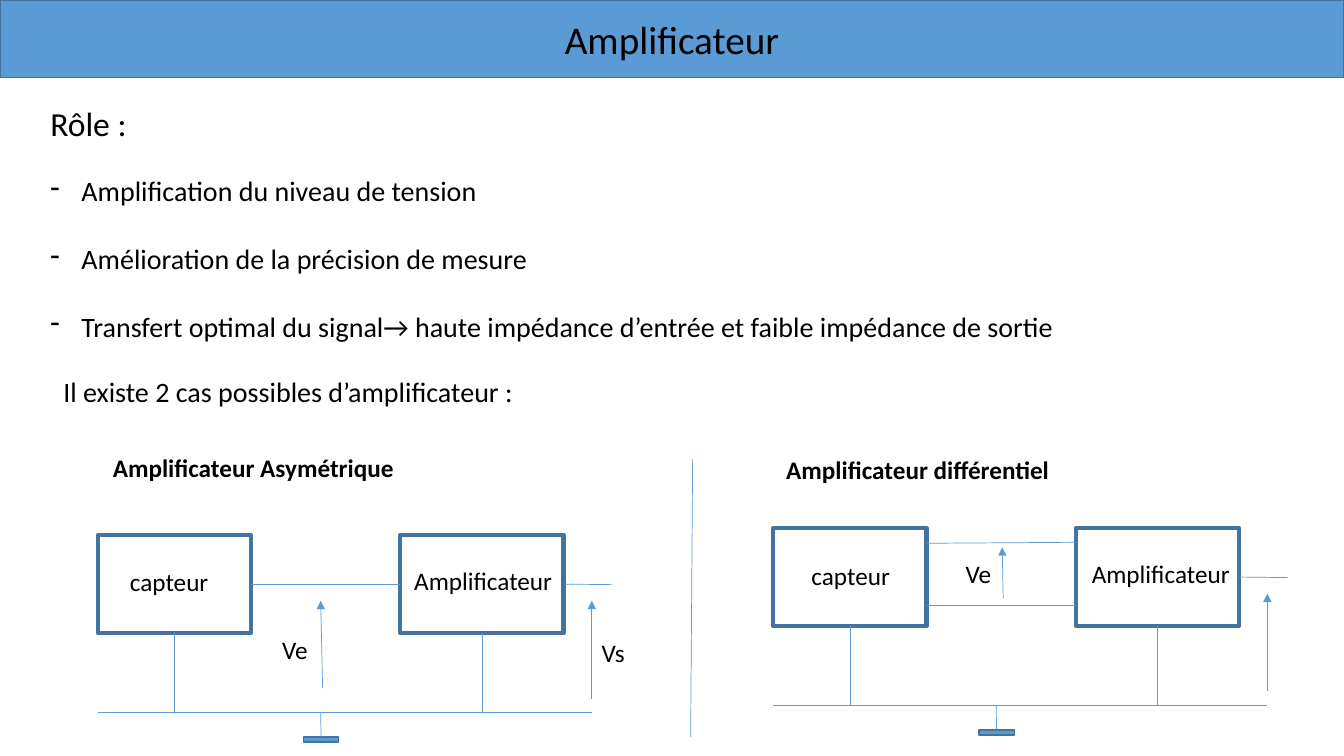
from lxml.etree import SubElement
from pptx import Presentation
from pptx.dml.color import RGBColor
from pptx.enum.shapes import MSO_CONNECTOR, MSO_SHAPE
from pptx.enum.text import MSO_ANCHOR, PP_ALIGN
from pptx.oxml.ns import qn
from pptx.util import Inches, Pt

COLORS = {"blue": "5B9BD5", "edge": "43739E", "text": "000000"}
FONT = "Calibri"
TOP, LEFT, BOTTOM, RIGHT = range(4)


def color(name):
    return RGBColor.from_string(COLORS[name])


class Board:
    """Draws styled elements on one slide, with lengths in inches."""

    def __init__(self, slide):
        self.slide = slide

    def styled_run(self, paragraph, text, size, bold=False):
        run = paragraph.add_run()
        run.text = text
        run.font.name = FONT
        run.font.size = Pt(size)
        run.font.bold = bold
        run.font.color.rgb = color("text")

    def box(self, left, top, width, height, weight=1, filled=True):
        shape = self.slide.shapes.add_shape(
            MSO_SHAPE.RECTANGLE, *map(Inches, (left, top, width, height)))
        shape.shadow.inherit = False
        if filled:
            shape.fill.solid()
            shape.fill.fore_color.rgb = color("blue")
        else:
            shape.fill.background()
        shape.line.color.rgb = color("edge")
        shape.line.width = Pt(weight)
        return shape

    def text_frame(self, left, top, width, height):
        area = self.slide.shapes.add_textbox(
            *map(Inches, (left, top, width, height)))
        area.text_frame.word_wrap = False
        return area.text_frame

    def label(self, text, left, top, width, height=0.4, size=18, bold=False):
        frame = self.text_frame(left, top, width, height)
        self.styled_run(frame.paragraphs[0], text, size, bold)

    def wire(self, start, end, begin_at=None, end_at=None, arrow=False):
        """Draw a thin line; begin_at and end_at are (shape, side) joints."""
        line = self.slide.shapes.add_connector(
            MSO_CONNECTOR.STRAIGHT, *map(Inches, (*start, *end)))
        line.line.color.rgb = color("blue")
        line.line.width = Pt(0.5)
        if begin_at:
            line.begin_connect(*begin_at)
        if end_at:
            line.end_connect(*end_at)
        props = line._element.spPr
        if arrow:
            SubElement(props.find(qn("a:ln")), qn("a:tailEnd"), type="triangle")
        SubElement(props, qn("a:effectLst"))

    def role_list(self, heading, roles):
        frame = self.text_frame(0.4, 0.97, 10.28, 2.49)
        self.styled_run(frame.paragraphs[0], heading, 24)
        for index, role in enumerate(roles):
            paragraph = frame.add_paragraph()
            paragraph.space_before = Pt(24.4 if index else 22)
            props = paragraph._p.get_or_add_pPr()
            props.set("marL", str(Inches(0.31)))
            props.set("indent", str(-Inches(0.31)))
            SubElement(props, qn("a:buFontTx"))
            SubElement(props, qn("a:buChar"), char="-")
            self.styled_run(paragraph, role, 20)

    def circuit(self, left, top):
        """Draw a sensor and an amplifier on a common ground; return both."""
        sensor = self.box(left, top, 1.52, 0.97, 3, filled=False)
        amplifier = self.box(left + 3, top, 1.62, 0.97, 3, filled=False)
        plate = self.box(left + 2.04, top + 2, 0.35, 0.05)
        middle, bottom, ground = top + 0.49, top + 0.97, top + 1.76
        self.wire((left, ground), (left + 4.9, ground))
        for block, x in ((sensor, left + 0.76), (amplifier, left + 3.81)):
            self.wire((x, bottom), (x, ground), begin_at=(block, BOTTOM))
        self.wire((left + 2.21, ground), (left + 2.21, top + 2), end_at=(plate, TOP))
        self.wire((left + 4.62, middle), (left + 5.1, middle),
                  begin_at=(amplifier, RIGHT))
        self.wire((left + 4.9, top + 1.62), (left + 4.9, top + 0.65), arrow=True)
        return sensor, amplifier


def main():
    deck = Presentation()
    deck.slide_width, deck.slide_height = Inches(13.33), Inches(7.5)
    board = Board(deck.slides.add_slide(deck.slide_layouts[6]))

    banner = board.box(0, 0, 13.33, 0.77).text_frame
    banner.vertical_anchor = MSO_ANCHOR.MIDDLE
    banner.paragraphs[0].alignment = PP_ALIGN.CENTER
    board.styled_run(banner.paragraphs[0], "Amplificateur", 28)

    board.role_list("Rôle :", [
        "Amplification du niveau de tension",
        "Amélioration de la précision de mesure",
        "Transfert optimal du signal→ haute impédance d’entrée et faible impédance de sortie",
    ])
    board.label("Il existe 2 cas possibles d’amplificateur :",
                0.53, 3.67, 4.77, 0.44, size=20)
    board.wire((6.87, 4.55), (6.85, 7.31))

    # Asymmetric case: one signal wire
    sensor, amplifier = board.circuit(0.97, 5.31)
    board.wire((2.49, 5.8), (3.97, 5.8), (sensor, RIGHT), (amplifier, LEFT))
    board.wire((3.2, 6.83), (3.18, 5.96), arrow=True)

    # Differential case: two signal wires
    board.circuit(7.67, 5.24)
    board.wire((9.19, 5.39), (10.67, 5.38))
    board.wire((9.19, 6.01), (10.67, 6.01))
    board.wire((9.95, 5.94), (9.94, 5.43), arrow=True)

    for text, left, top, width in (
        ("capteur", 1.19, 5.57, 0.99),
        ("Amplificateur", 4.01, 5.56, 1.58),
        ("Ve", 2.7, 6.24, 0.46),
        ("Vs", 5.87, 6.27, 0.43),
        ("capteur", 7.95, 5.51, 0.99),
        ("Amplificateur", 10.73, 5.49, 1.58),
        ("Ve", 9.48, 5.49, 0.46),
    ):
        board.label(text, left, top, width)
    board.label("Amplificateur Asymétrique", 1.02, 4.44, 3.01, bold=True)
    board.label("Amplificateur différentiel", 7.7, 4.46, 2.9, bold=True)

    deck.save("out.pptx")


if __name__ == "__main__":
    main()
